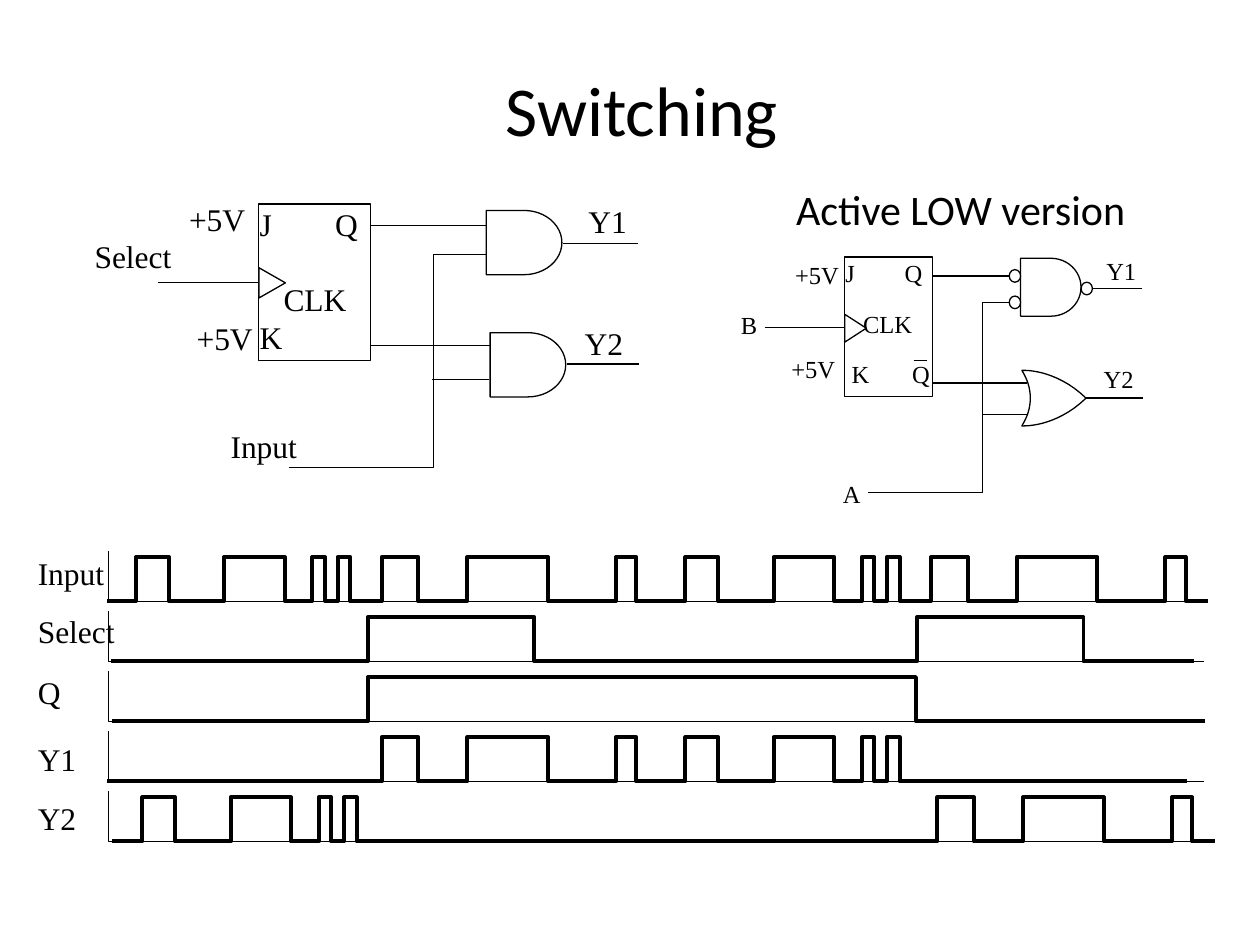
"""Build the Switching slide: two flip-flop circuits above their timing chart."""
from lxml.etree import SubElement as Sub
from pptx import Presentation
from pptx.dml.color import RGBColor as Rgb
from pptx.enum.shapes import MSO_CONNECTOR as Conn, MSO_SHAPE as Form
from pptx.enum.text import MSO_ANCHOR as Anchor, MSO_AUTO_SIZE as Auto, PP_ALIGN as Align
from pptx.oxml.ns import qn
from pptx.util import Inches, Pt

COLS = 100
HUE = {"ink": "000000", "paper": "FFFFFF"}
INK, PAPER = (Rgb.from_string(HUE[key]) for key in ("ink", "paper"))
SANS, SERIF = "Calibri", "Times New Roman"
THIN, AXIS, BOLD = 0.75, 0.5, 2.25

deck = Presentation()
deck.slide_width, deck.slide_height = Inches(10), Inches(7.5)
cell = deck.slide_width // COLS
slide = deck.slides.add_slide(deck.slide_layouts[6])
shapes = slide.shapes


def draw(pts, weight, close=False):
    pts = [(round(x * cell), round(y * cell)) for x, y in pts]
    if len(pts) == 2:
        item = shapes.add_connector(Conn.STRAIGHT, *pts[0], *pts[1])
        Sub(item._element.spPr, qn("a:effectLst"))
    else:
        pen = shapes.build_freeform(*pts[0], scale=1.0)
        pen.add_line_segments(pts[1:], close=close)
        item = pen.convert_to_shape()
        item.shadow.inherit = False
        item.fill.background()
    item.line.color.rgb = INK
    item.line.width = Pt(weight)


def write(frame, rows, font, size, pad, **form):
    look = {"word_wrap": True, "vertical_anchor": Anchor.TOP}
    look.update({f"margin_{side}": Inches(pad) for side in ("left", "top", "right", "bottom")})
    look.update(form)
    for key, val in look.items():
        setattr(frame, key, val)
    for num, (text, stops, gap) in enumerate(rows):
        para = frame.add_paragraph() if num else frame.paragraphs[0]
        para.alignment = Align.LEFT
        para.space_before = Pt(gap)
        run = para.add_run()
        run.text = text
        for key, val in {"name": font, "size": Pt(size)}.items():
            setattr(run.font, key, val)
        run.font.color.rgb = INK
        if stops:
            tabs = Sub(para._p.get_or_add_pPr(), qn("a:tabLst"))
            for stop in stops:
                Sub(tabs, qn("a:tab"), pos=str(round(stop * cell)), algn="l")


wires = [
    [(12.5, 22.4), (20.5, 22.4)],
    [(22.9, 37.1), (34.4, 37.1), (34.4, 20.2), (38.6, 20.2)],
    [(34.3, 30.1), (38.8, 30.1)],
    [(29.4, 17.9), (38.6, 17.9)],
    [(29.4, 27.4), (38.9, 27.4)],
    [(44.7, 19.3), (50.6, 19.3)],
    [(45, 28.9), (50.7, 28.9)],
    [(60.7, 26), (67, 26)],
    [(68.9, 39.1), (78, 39.1), (78, 24), (81.4, 24)],
    [(78, 32.9), (81.5, 32.9)],
    [(74, 21.9), (81.4, 21.9)],
    [(74, 30.4), (81.5, 30.4)],
    [(86, 22.9), (90.6, 22.9)],
    [(86.1, 31.6), (90.7, 31.6)],
    [(72.5, 28.6), (73.6, 28.6)],
]
for wire in wires:
    draw(wire, THIN)

arcs = [
    [(81.1, 29.4), (81.1, 29.4), (83.7, 29.2), (86.2, 31.6)],
    [(86.2, 31.6), (83.7, 34), (81.1, 33.8), (81.1, 33.8)],
    [(81.1, 33.8), (82, 32.4), (82, 30.8), (81.1, 29.4)],
]
steps = 16
gate = []
for arc in arcs:
    for step in range(steps):
        t = step / steps
        parts = ((1 - t) ** 3, 3 * t * (1 - t) ** 2, 3 * t * t * (1 - t), t ** 3)
        gate.append(tuple(sum(k * p[axis] for k, p in zip(parts, arc)) for axis in (0, 1)))
draw(gate, THIN, close=True)

chips = [
    ((20.5, 16.2, 8.9, 12.4), 18, [("J\tQ", [6], 0), ("\tCLK", [1.9], 21), ("K", [], 0)]),
    ((67, 20.4, 7, 11.1), 14, [("J\tQ", [4.7], 0), ("\tCLK", [1.4], 12), ("\tK\tQ", [0.5, 5.3], 12)]),
]
parts = [(Form.RECTANGLE, box, 0, size, rows) for box, size, rows in chips]
parts += [(form, box, turn, 0, []) for form, turn, boxes in [
    (Form.FLOWCHART_DELAY, 0, [(38.6, 16.7, 6, 5.1), (38.9, 26.4, 6, 5.1), (81, 20.5, 4.8, 4.6)]),
    (Form.ISOSCELES_TRIANGLE, 90, [(20.4, 21.4, 2.4, 2.1), (66.8, 25.2, 2.2, 1.7)]),
    (Form.OVAL, 0, [(80.1, 21.4, 0.9, 1), (80.1, 23.5, 0.9, 1), (85.8, 22.4, 0.9, 1)]),
] for box in boxes]
for form, box, turn, size, rows in parts:
    item = shapes.add_shape(form, *(round(n * cell) for n in box))
    item.shadow.inherit = False
    item.rotation = turn
    item.line.color.rgb = INK
    item.line.width = Pt(THIN)
    if rows:
        item.fill.background()
        write(item.text_frame, rows, SERIF, size, 0.01, margin_right=0)
    else:
        item.fill.solid()
        item.fill.fore_color.rgb = PAPER

half = [(10.8, 13.4), (17.8, 22.6), (24.8, 25.8), (26.8, 27.8), (30.3, 33.2), (37.1, 43.5), (48.9, 50.5)]
span = 43.6
feed = half + [(a + span, b + span) for a, b in half]
on, off = 29.2, 72.7
lag = 0.5
waves = [
    ("Input", 44, 8.5, 95.9, feed),
    ("Select", 48.6, 8.8, 94.8, [(on, 42.4), (off + 0.1, 86)]),
    ("Q", 53.4, 8.9, 95.6, [(on, off)]),
    ("Y1", 58.7, 8.5, 94.2, [p for p in feed if on < p[0] < off]),
    ("Y2", 63.4, 8.9, 96.4, [(a + lag, b + lag) for a, b in feed if not on < a < off]),
]
labels = []
for row, (name, top, start, end, pulses) in enumerate(waves):
    base = 47.7 + row * 4.77
    high = base - 3.5
    draw([(95.6, base), (8.6, base), (8.6, base - 4)], AXIS)
    trace = [(start, base)]
    for rise, fall in pulses:
        trace += [(rise, base), (rise, high), (fall, high), (fall, base)]
    draw(trace + [(end, base)], BOLD)
    labels.append((name, (3, top, 6.7, 2.9), 18, 0))

labels += [(text, box, 18, 0.01) for text, box in [
    ("Input", (18.2, 33.8, 5.8, 3.9)),
    ("+5V", (14.9, 15.8, 5.1, 3.5)),
    ("+5V", (15.5, 25.2, 5.1, 3.5)),
    ("Select", (7.4, 18.7, 7.5, 3.9)),
    ("Y2", (46.3, 25.6, 6.5, 3.9)),
    ("Y1", (46.6, 15.9, 5, 3.9)),
]]
labels += [(text, box, 14, 0.01) for text, box in [
    ("A", (66.8, 37.9, 2.9, 3.5)),
    ("+5V", (63, 20.5, 4.1, 3.1)),
    ("+5V", (62.7, 28, 4.1, 3.1)),
    ("B", (58.7, 24.5, 3.7, 3.5)),
    ("Y2", (87.5, 28.8, 5.4, 3.5)),
    ("Y1", (87.7, 20.2, 4.8, 3.5)),
]]
heads = [
    ("Switching", (13.9, 4.8, 74.1, 7.7), 40, Align.CENTER, True),
    ("Active LOW version", (62.2, 14.1, 28.6, 5), 24, Align.LEFT, False),
]
for text, box, size, pad in labels:
    item = shapes.add_textbox(*(round(n * cell) for n in box))
    write(item.text_frame, [(text, [], 0)], SERIF, size, pad)
for text, box, size, side, wrap in heads:
    item = shapes.add_textbox(*(round(n * cell) for n in box))
    write(item.text_frame, [(text, [], 0)], SANS, size, 0.05,
          word_wrap=wrap, auto_size=Auto.SHAPE_TO_FIT_TEXT,
          margin_left=Inches(0.1), margin_right=Inches(0.1))
    item.text_frame.paragraphs[0].alignment = side

deck.save("out.pptx")
